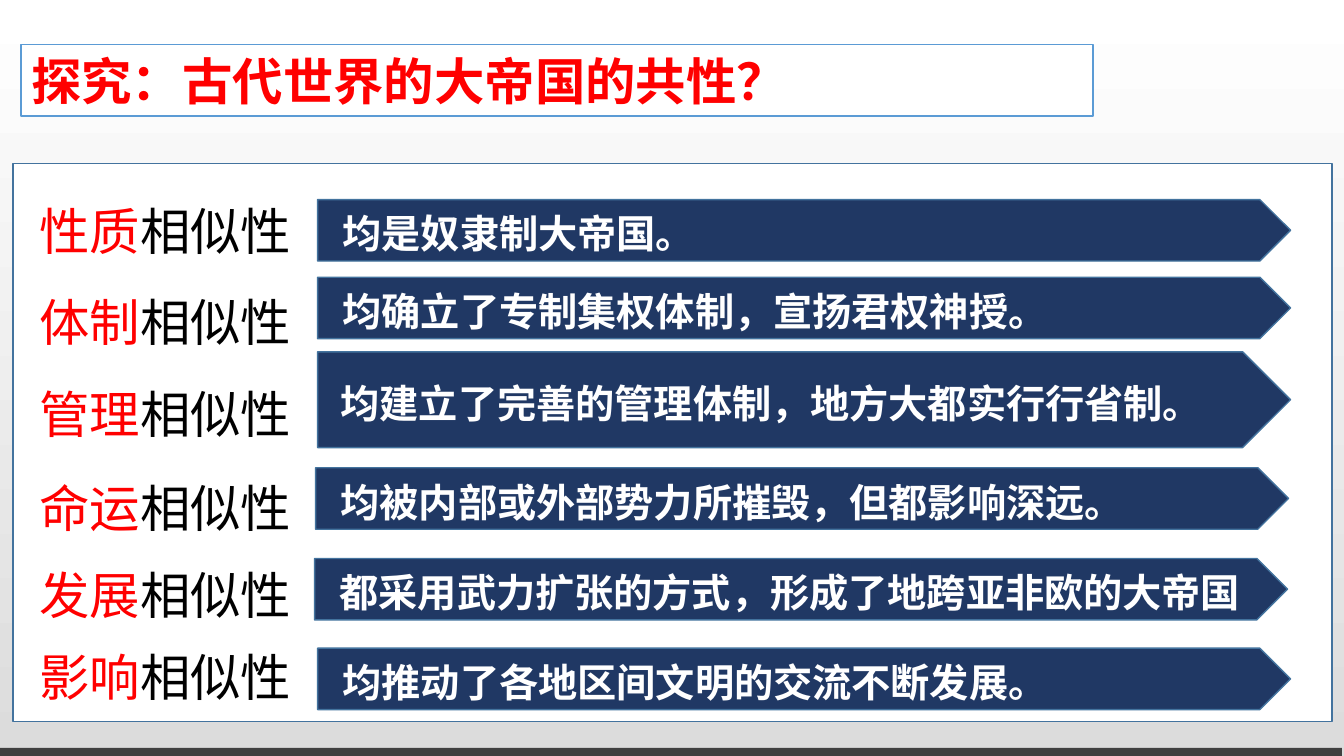
from dataclasses import dataclass

from lxml import etree
from pptx import Presentation
from pptx.dml.color import RGBColor
from pptx.enum.shapes import MSO_SHAPE
from pptx.enum.text import MSO_ANCHOR, PP_ALIGN
from pptx.oxml.ns import qn
from pptx.util import Emu, Pt

RECT, ARROW = MSO_SHAPE.RECTANGLE, MSO_SHAPE.PENTAGON
LEFT, CENTER = PP_ALIGN.LEFT, PP_ALIGN.CENTER
MIDDLE = MSO_ANCHOR.MIDDLE

WHITE = RGBColor(0xFF, 0xFF, 0xFF)
BLACK = RGBColor(0x00, 0x00, 0x00)
RED = RGBColor(0xFF, 0x00, 0x00)
NAVY = RGBColor(0x20, 0x38, 0x64)
STEEL = RGBColor(0x43, 0x73, 0x9E)
SKY = RGBColor(0x5B, 0x9B, 0xD5)
CHARCOAL = RGBColor(0x40, 0x40, 0x40)
PALE_GRAY = RGBColor(0xDC, 0xDC, 0xDC)

FONT = "Noto Sans CJK SC"
EMU_PER_PX = 9144
LABEL_X, LABEL_W, LABEL_H = 29, 270, 71
ARROW_W, TEXT_H = 965, 57


@dataclass
class Similarity:
    """One shared trait: its label and the arrow that explains it."""

    topic: str
    statement: str
    label_y: int
    arrow_x: int
    arrow_y: int
    arrow_h: int = 61
    text_dx: int = 15
    text_dy: int = 5
    text_w: int = 908


SIMILARITIES = [
    Similarity("性质", "均是奴隶制大帝国。", 193, 315, 198),
    Similarity("体制", "均确立了专制集权体制，宣扬君权神授。", 283, 315, 275),
    Similarity("管理", "均建立了完善的管理体制，地方大都实行行省制。", 375, 315, 349,
               arrow_h=95, text_dx=13, text_dy=22),
    Similarity("命运", "均被内部或外部势力所摧毁，但都影响深远。", 468, 313, 464),
    Similarity("发展", "都采用武力扩张的方式，形成了地跨亚非欧的大帝国", 554, 312, 554,
               text_w=940),
    Similarity("影响", "均推动了各地区间文明的交流不断发展。", 635, 315, 643),
]


def px(n: int) -> Emu:
    """Convert px to EMU."""
    return Emu(n * EMU_PER_PX)


def add_box(s, kind, x: int, y: int, w: int, h: int, fill: RGBColor, line: RGBColor | None = None):
    """Draw a filled preset shape with an optional outline."""
    sp = s.shapes.add_shape(kind, px(x), px(y), px(w), px(h))
    sp.shadow.inherit = False
    sp.fill.solid()
    sp.fill.fore_color.rgb = fill
    if line is None:
        sp.line.fill.background()
    else:
        sp.line.color.rgb = line
        sp.line.width = Pt(1)
    return sp


def write(sp, *runs: tuple[str, RGBColor], size: int, bold: bool = False,
          align=LEFT, wrap: bool = True) -> None:
    """Write coloured runs as one paragraph in a shape."""
    tf = sp.text_frame
    tf.word_wrap = wrap
    tf.vertical_anchor = MIDDLE
    p = tf.paragraphs[0]
    p.alignment = align
    for text, color in runs:
        r = p.add_run()
        r.text = text
        r.font.size = Pt(size)
        r.font.bold = bold
        r.font.color.rgb = color
        r.font.name = FONT
        etree.SubElement(r.font._element, qn("a:ea"), typeface=FONT)


def add_text(s, x: int, y: int, w: int, h: int, *runs: tuple[str, RGBColor], **fmt) -> None:
    """Add a text box holding formatted runs."""
    write(s.shapes.add_textbox(px(x), px(y), px(w), px(h)), *runs, **fmt)


def add_similarity(s, row: Similarity) -> None:
    """Draw a label with its explaining arrow."""
    add_text(s, LABEL_X, row.label_y, LABEL_W, LABEL_H, (row.topic, RED), ("相似性", BLACK),
             size=36, align=CENTER, wrap=False)
    add_box(s, ARROW, row.arrow_x, row.arrow_y, ARROW_W, row.arrow_h, NAVY, STEEL)
    add_text(s, row.arrow_x + row.text_dx, row.arrow_y + row.text_dy, row.text_w, TEXT_H,
             (row.statement, WHITE), size=28, bold=True)


def paint_background(s) -> None:
    """Fill the background with a vertical gradient."""
    fill = s.background.fill
    fill.gradient()
    fill.gradient_angle = 270
    for stop, color, position in zip(fill.gradient_stops, (WHITE, PALE_GRAY), (0, 1)):
        stop.color.rgb = color
        stop.position = position


def main() -> None:
    """Build the slide and save it."""
    prs = Presentation()
    prs.slide_width, prs.slide_height = px(1333), px(750)
    s = prs.slides.add_slide(prs.slide_layouts[6])
    paint_background(s)
    add_box(s, RECT, 13, 162, 1308, 554, WHITE, STEEL)
    add_box(s, RECT, -2, 742, 1333, 8, CHARCOAL)
    title = add_box(s, RECT, 21, 44, 1063, 71, WHITE, SKY)
    write(title, ("探究：古代世界的大帝国的共性？", RED), size=36, bold=True)
    for row in SIMILARITIES:
        add_similarity(s, row)
    prs.save("out.pptx")


if __name__ == "__main__":
    main()
